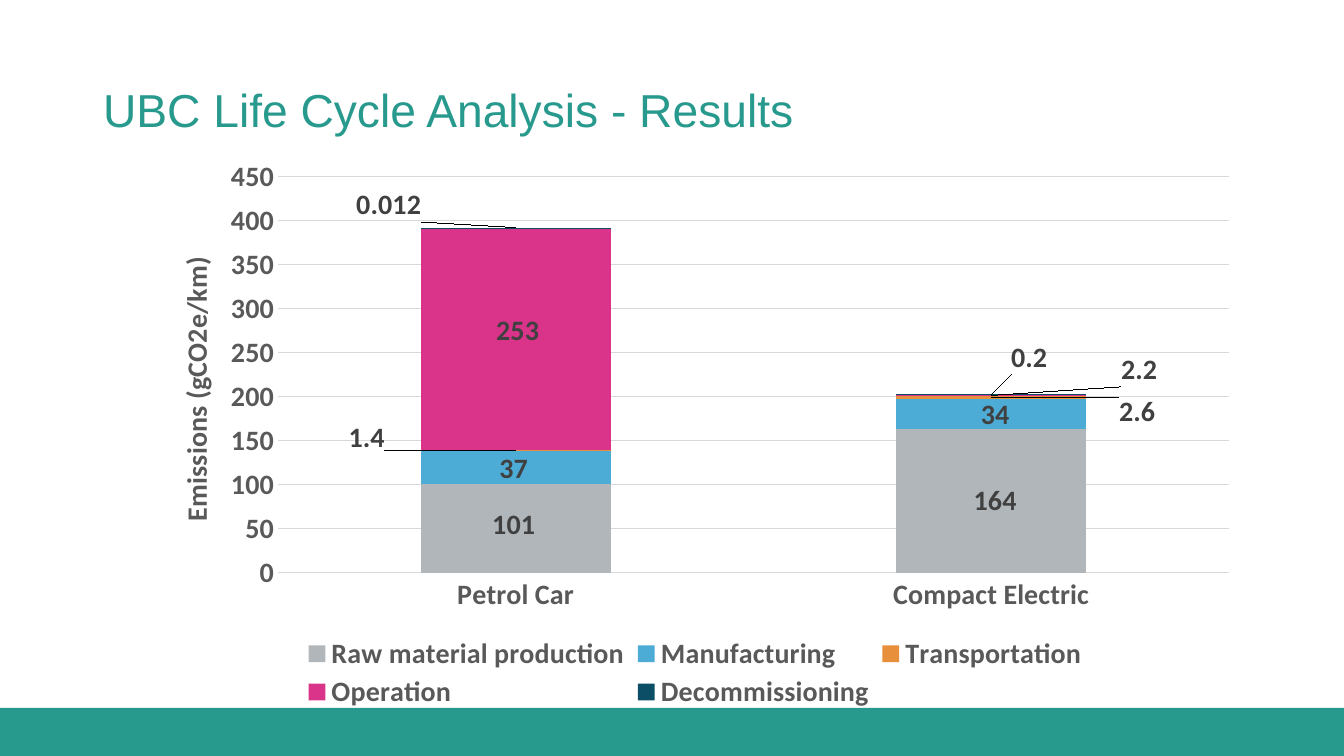
from pptx import Presentation
from pptx.chart.data import CategoryChartData
from pptx.dml.color import RGBColor
from pptx.enum.chart import XL_CHART_TYPE, XL_LABEL_POSITION, XL_LEGEND_POSITION, XL_TICK_MARK
from pptx.enum.shapes import MSO_SHAPE
from pptx.enum.text import MSO_ANCHOR, MSO_AUTO_SIZE, PP_ALIGN
from pptx.oxml import parse_xml
from pptx.oxml.ns import nsdecls
from pptx.util import Pt

STACK = XL_CHART_TYPE.COLUMN_STACKED
CENTER = XL_LABEL_POSITION.CENTER
BOTTOM = XL_LEGEND_POSITION.BOTTOM
NO_TICK = XL_TICK_MARK.NONE
RECT = MSO_SHAPE.RECTANGLE
MIDDLE = MSO_ANCHOR.MIDDLE
NO_FIT = MSO_AUTO_SIZE.NONE
LEFT = PP_ALIGN.LEFT

PX = 9144000 / 1008
WIDE, HIGH = 1344, 756
CHART = (140, 148, 1112, 568)
THEME = {
    "teal": RGBColor.from_string("28998D"),
    "grid": RGBColor.from_string("D9D9D9"),
    "title": {"name": "Arial", "size": Pt(33), "bold": False},
    "chart": {"name": "Calibri", "size": Pt(20), "bold": True},
    "axis": RGBColor.from_string("595959"),
    "label": RGBColor.from_string("404040"),
}

CARS = ["Petrol Car", "Compact Electric"]
# name, colour, values, label shifts in px
STAGES = [
    ("Raw material production", "B0B6BA", (101, 164), ((-2, -4), (4, 0))),
    ("Manufacturing", "4DACD6", (37, 34), ((-2, 1), (4, 1))),
    ("Transportation", "E88F3C", (1.4, 2.6), ((-149, -13), (146, 14))),
    ("Operation", "D9338A", (253, 2.2), ((2, -8), (148, -26))),
    ("Decommissioning", "0B4E65", (0.012, 0.2), ((-127, -23), (38, -37))),
]


def style(font, kind, color):
    for key, value in THEME[kind].items():
        setattr(font, key, value)
    font.color.rgb = color


def layout(x, y, size=None, inner=False):
    """Make a manual chart layout from px, as shares of the chart's size."""
    marks = ["<c:layoutTarget val='inner'/>"] if inner else []
    if size:
        marks += ["<c:xMode val='edge'/><c:yMode val='edge'/>"]
    shares = {"x": x / CHART[2], "y": y / CHART[3]}
    if size and any(size):
        shares.update(w=size[0] / CHART[2], h=size[1] / CHART[3])
    marks += [f"<c:{key} val='{share:.4f}'/>" for key, share in shares.items()]
    return parse_xml(f"<c:layout {nsdecls('c')}><c:manualLayout>"
                     f"{''.join(marks)}</c:manualLayout></c:layout>")


deck = Presentation()
deck.slide_width, deck.slide_height = round(WIDE * PX), round(HIGH * PX)
slide = deck.slides.add_slide(deck.slide_layouts[5])

band = slide.shapes.add_shape(RECT, *(round(n * PX) for n in (0, 708, WIDE, 48)))
band.shadow.inherit = False
band.fill.solid()
band.fill.fore_color.rgb = THEME["teal"]
band.line.fill.background()

title = slide.shapes.title
box = [round(n * PX) for n in (93, 40, 1159, 146)]
title.left, title.top, title.width, title.height = box
frame = title.text_frame
frame.text = "UBC Life Cycle Analysis - Results"
frame.auto_size = NO_FIT
frame.vertical_anchor = MIDDLE
head = frame.paragraphs[0]
head.alignment = LEFT
head.line_spacing = 0.9
style(head.runs[0].font, "title", THEME["teal"])

data = CategoryChartData()
data.categories = CARS
for name, _, values, _ in STAGES:
    data.add_series(name, values)
chart = slide.shapes.add_chart(STACK, *(round(n * PX) for n in CHART), data).chart
style(chart.font, "chart", THEME["axis"])
chart.has_title = False

plot = chart.plots[0]
plot.gap_width = 150
plot.overlap = 100
plot.vary_by_categories = False
for series, (_, color, _, shifts) in zip(plot.series, STAGES):
    series.format.fill.solid()
    series.format.fill.fore_color.rgb = RGBColor.from_string(color)
    labels = series.data_labels
    labels.show_value = True
    labels.position = CENTER
    style(labels.font, "chart", THEME["label"])
    for spot, shift in enumerate(shifts):
        label = series.points[spot].data_label
        label.position = CENTER
        style(label.font, "chart", THEME["label"])
    for mark, shift in zip(labels._element.findall("{*}dLbl"), shifts):
        mark.insert(1, layout(*shift))

for axis in (chart.category_axis, chart.value_axis):
    axis.major_tick_mark = axis.minor_tick_mark = NO_TICK
    style(axis.tick_labels.font, "chart", THEME["axis"])
cars, scale = chart.category_axis, chart.value_axis
cars.format.line.color.rgb = THEME["grid"]
cars.format.line.width = Pt(0.75)
scale.minimum_scale, scale.maximum_scale, scale.major_unit = 0, 450, 50
scale.format.line.fill.background()
scale.major_gridlines.format.line.color.rgb = THEME["grid"]
scale.major_gridlines.format.line.width = Pt(0.75)
words = scale.axis_title.text_frame
words.text = "Emissions (gCO2e/km)"
style(words.paragraphs[0].runs[0].font, "chart", THEME["axis"])

chart.has_legend = True
legend = chart.legend
legend.position = BOTTOM
legend.include_in_layout = False
style(legend.font, "chart", THEME["axis"])

places = [
    (chart._chartSpace.chart.plotArea, 0, layout(138, 29, (951, 396), True)),
    (scale.axis_title._element, 1, layout(31, 104, (0, 0))),
    (legend._element, 1, layout(155, 485, (800, 80))),
]
for part, spot, place in places:
    for old in part.findall("{*}layout"):
        part.remove(old)
    part.insert(spot, place)

deck.save("out.pptx")
